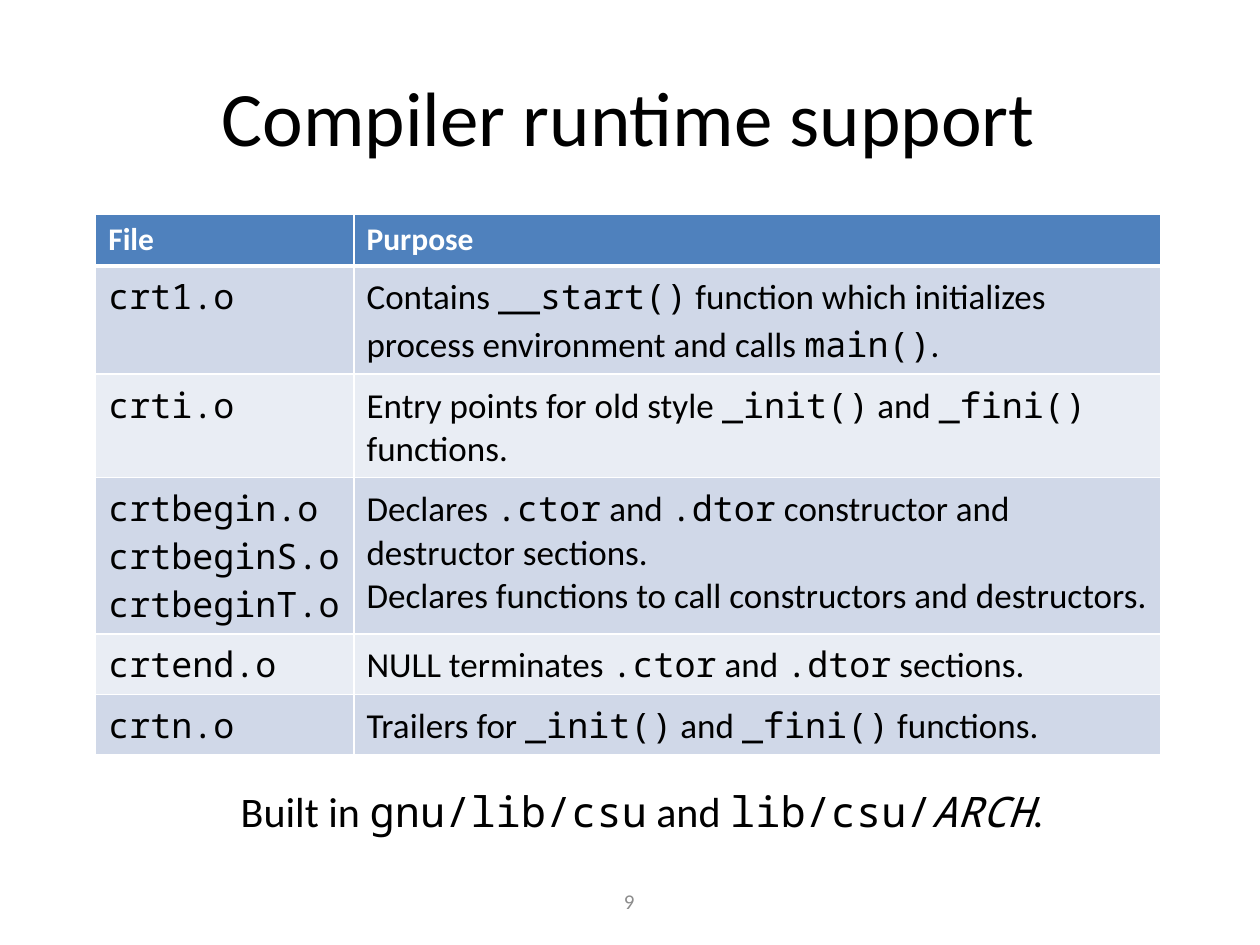
from dataclasses import dataclass

from lxml.etree import SubElement
from pptx import Presentation
from pptx.dml.color import RGBColor
from pptx.enum.text import MSO_ANCHOR, MSO_AUTO_SIZE, PP_ALIGN
from pptx.oxml.ns import qn
from pptx.slide import Slide
from pptx.table import _Cell
from pptx.text.text import TextFrame
from pptx.util import Inches, Pt

WIDTH, HEIGHT = Inches(10), Inches(7.5)
BLACK = RGBColor(0x00, 0x00, 0x00)
WHITE = RGBColor(0xFF, 0xFF, 0xFF)
GRAY = RGBColor(0x8C, 0x8C, 0x8C)
BLUE = RGBColor(0x4F, 0x81, 0xBD)
BANDS = RGBColor(0xE9, 0xED, 0xF4), RGBColor(0xD0, 0xD8, 0xE8)

SANS = {"name": "Calibri", "italic": False}
MONO = {"name": "Noto Sans Mono", "italic": False}
SLANT = {"name": "Noto Sans Mono", "italic": True}


@dataclass
class Style:
    size: int
    color: RGBColor = BLACK
    bold: bool = False


@dataclass
class Label:
    """A text box; its place is given as shares of the slide's size."""
    text: str
    left: float
    top: float
    width: float
    height: float
    style: Style
    anchor: MSO_ANCHOR = MSO_ANCHOR.MIDDLE
    fit: MSO_AUTO_SIZE = MSO_AUTO_SIZE.NONE


LABELS = [
    Label("Compiler runtime support", 0.049, 0.04, 0.9, 0.165, Style(44)),
    Label("9", 0.448, 0.927, 0.103, 0.053, Style(12, GRAY)),
    Label("Built in `gnu/lib/csu` and `lib/csu/*ARCH*`.", 0.181, 0.825,
          0.657, 0.067, Style(24), MSO_ANCHOR.TOP,
          MSO_AUTO_SIZE.SHAPE_TO_FIT_TEXT),
]

COLUMNS = 2.05, 6.4
ROW = 0.41
ROWS = [
    ("File", "Purpose"),
    ("`crt1.o`", "Contains `__start()` function which initializes process "
                 "environment and calls `main()`."),
    ("`crti.o`", "Entry points for old style `_init()` and `_fini()` functions."),
    ("`crtbegin.o`\n`crtbeginS.o`\n`crtbeginT.o`",
     "Declares `.ctor` and `.dtor` constructor and destructor sections.\n"
     "Declares functions to call constructors and destructors."),
    ("`crtend.o`", "NULL terminates `.ctor` and `.dtor` sections."),
    ("`crtn.o`", "Trailers for `_init()` and `_fini()` functions."),
]


def write(frame: TextFrame, text: str, style: Style, align: PP_ALIGN) -> None:
    """Fill a frame: `code` is monospaced, *words* within code are italic."""
    for row, line in enumerate(text.split("\n")):
        para = frame.add_paragraph() if row else frame.paragraphs[0]
        para.alignment = align
        for i, part in enumerate(line.split("`")):
            for j, piece in enumerate(part.split("*")):
                if not piece:
                    continue
                run = para.add_run()
                run.text = piece
                face = (SLANT if j % 2 else MONO) if i % 2 else SANS
                look = {**face, "size": Pt(style.size), "bold": style.bold}
                for key, value in look.items():
                    setattr(run.font, key, value)
                run.font.color.rgb = style.color


def edge(cell: _Cell, side: str, points: int) -> None:
    props = cell._tc.get_or_add_tcPr()
    line = SubElement(props, qn(f"a:ln{side}"), w=str(Pt(points)))
    fill = SubElement(line, qn("a:solidFill"))
    SubElement(fill, qn("a:srgbClr"), val=str(WHITE))


def label(slide: Slide, item: Label) -> None:
    box = slide.shapes.add_textbox(
        int(item.left * WIDTH), int(item.top * HEIGHT),
        int(item.width * WIDTH), int(item.height * HEIGHT))
    frame = box.text_frame
    look = {"word_wrap": True, "auto_size": item.fit,
            "vertical_anchor": item.anchor}
    for key, value in look.items():
        setattr(frame, key, value)
    write(frame, item.text, item.style, PP_ALIGN.CENTER)


def grid(slide: Slide) -> None:
    table = slide.shapes.add_table(
        len(ROWS), len(COLUMNS), Inches(0.76), Inches(1.7),
        Inches(sum(COLUMNS)), Inches(ROW * len(ROWS))).table
    for column, width in zip(table.columns, COLUMNS):
        column.width = Inches(width)
    for r, texts in enumerate(ROWS):
        table.rows[r].height = Inches(ROW)
        style = Style(20) if r else Style(18, WHITE, True)
        sides = {"L": 1, "R": 1, "T": 3 if r == 1 else 1, "B": 1 if r else 3}
        for c, text in enumerate(texts):
            cell = table.cell(r, c)
            for side, points in sides.items():
                edge(cell, side, points)
            cell.fill.solid()
            cell.fill.fore_color.rgb = BANDS[r % 2] if r else BLUE
            write(cell.text_frame, text, style, PP_ALIGN.LEFT)


def main() -> None:
    deck = Presentation()
    deck.slide_width, deck.slide_height = WIDTH, HEIGHT
    slide = deck.slides.add_slide(deck.slide_layouts[6])
    grid(slide)
    for item in LABELS:
        label(slide, item)
    deck.save("out.pptx")


if __name__ == "__main__":
    main()
